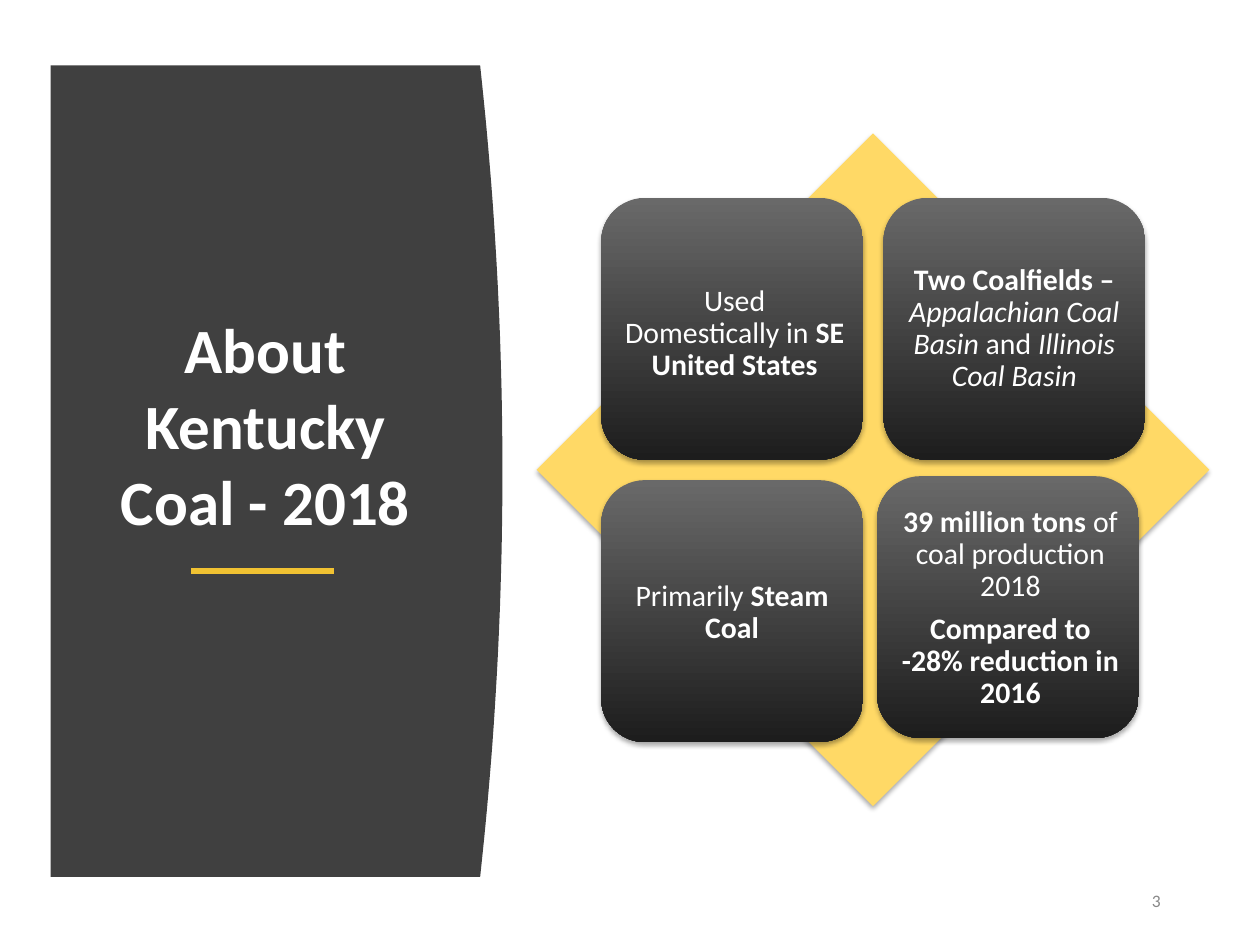
"""Build the "About Kentucky Coal - 2018" slide."""
from lxml.etree import SubElement
from pptx import Presentation
from pptx.dml.color import RGBColor
from pptx.enum.shapes import MSO_CONNECTOR as Connector
from pptx.enum.shapes import MSO_SHAPE as Shape
from pptx.enum.text import MSO_ANCHOR as Anchor
from pptx.enum.text import PP_ALIGN as Align
from pptx.oxml.ns import qn
from pptx.util import Cm, Pt

COLORS = {
    "panel": "404040",
    "diamond": "FFD966",
    "accent": "F1C232",
    "card_top": "696969",
    "card_bottom": "1D1D1D",
    "white": "FFFFFF",
    "number": "888888",
    "shadow": "000000",
}
CARD_SIZE = 5.28
CARD_TEXT_WIDTH = 4.78

# Each card: position, text box (left, top, height), paragraphs of (text, style).
CARDS = [
    ((12.12, 3.99), (12.42, 4.34, 4.78),
     [[("Used Domestically in ", ""), ("SE United States", "b")]]),
    ((17.81, 3.99), (18.06, 4.24, 4.78),
     [[("Two Coalfields – ", "b"), ("Appalachian Coal Basin ", "i"),
       ("and", ""), (" Illinois Coal Basin", "i")]]),
    ((12.12, 9.68), (12.37, 9.96, 4.78),
     [[("Primarily", ""), (" Steam Coal", "b")]]),
    ((17.68, 9.6), (17.98, 9.83, 4.88),
     [[("39 million tons ", "b"), ("of coal production 2018", "")],
      [("Compared to -28% reduction in 2016", "b")]]),
]


def rgb(name):
    return RGBColor.from_string(COLORS[name])


def add_soft_shadow(shape):
    effects = shape._element.spPr.get_or_add_effectLst() if hasattr(
        shape._element.spPr, "get_or_add_effectLst") else SubElement(
        shape._element.spPr, qn("a:effectLst"))
    shadow = SubElement(effects, qn("a:outerShdw"), blurRad=str(Pt(3.1)),
                        dist=str(Pt(1.8)), dir="5400000", rotWithShape="0")
    color = SubElement(shadow, qn("a:srgbClr"), val=COLORS["shadow"])
    SubElement(color, qn("a:alpha"), val="35000")


def add_panel(page):
    left, top, edge, bulge, bottom = 1.02, 1.32, 9.68, 0.45, 17.68
    middle, half, steps = (top + bottom) / 2, (bottom - top) / 2, 48
    curve = []
    for step in range(steps + 1):
        offset = 2 * step / steps - 1
        curve.append((Cm(edge + bulge * (1 - offset ** 2)),
                      Cm(middle + half * offset)))
    builder = page.shapes.build_freeform(Cm(left), Cm(top))
    builder.add_line_segments(curve + [(Cm(left), Cm(bottom))], close=True)
    panel = builder.convert_to_shape()
    panel.shadow.inherit = False
    panel.fill.solid()
    panel.fill.fore_color.rgb = rgb("panel")
    panel.line.fill.background()


def add_text(page, position, paragraphs, size, color="white",
             align=Align.CENTER, inset=None, spacing=None):
    box = page.shapes.add_textbox(*map(Cm, position))
    frame = box.text_frame
    frame.word_wrap = True
    frame.vertical_anchor = Anchor.MIDDLE
    if inset is not None:
        frame.margin_left = frame.margin_right = Cm(inset)
        frame.margin_top = frame.margin_bottom = Cm(inset)
    for index, spans in enumerate(paragraphs):
        para = frame.add_paragraph() if index else frame.paragraphs[0]
        para.alignment = align
        para.line_spacing = spacing
        if index:
            para.space_before = Pt(6)
        para.font.name = "Calibri"
        para.font.size = Pt(size)
        para.font.color.rgb = rgb(color)
        for text, style in spans:
            span = para.add_run()
            span.text = text
            span.font.bold = "b" in style
            span.font.italic = "i" in style


def add_diamond(page):
    diamond = page.shapes.add_shape(
        Shape.DIAMOND, Cm(10.82), Cm(2.69), Cm(13.56), Cm(13.56))
    diamond.fill.solid()
    diamond.fill.fore_color.rgb = rgb("diamond")
    diamond.line.fill.background()
    add_soft_shadow(diamond)


def add_card(page, position, text_place, paragraphs):
    left, top = position
    card = page.shapes.add_shape(
        Shape.ROUNDED_RECTANGLE, Cm(left), Cm(top), Cm(CARD_SIZE), Cm(CARD_SIZE))
    card.adjustments[0] = 0.167
    card.fill.gradient()
    card.fill.gradient_angle = 270
    for stop, name in zip(card.fill.gradient_stops, ("card_top", "card_bottom")):
        stop.color.rgb = rgb(name)
    card.line.fill.background()
    add_soft_shadow(card)
    text_left, text_top, height = text_place
    add_text(page, (text_left, text_top, CARD_TEXT_WIDTH, height), paragraphs,
             17, inset=0.18, spacing=0.9)


def add_rule(page):
    rule = page.shapes.add_connector(
        Connector.STRAIGHT, Cm(3.86), Cm(11.51), Cm(6.73), Cm(11.51))
    rule.line.color.rgb = rgb("accent")
    rule.line.width = Pt(3)
    SubElement(rule._element.spPr, qn("a:effectLst"))


def main():
    deck = Presentation()
    deck.slide_width, deck.slide_height = Cm(25.4), Cm(19.05)
    page = deck.slides.add_slide(deck.slide_layouts[6])
    add_panel(page)
    add_text(page, (1.8, 1.9, 7.11, 13.31),
             [[("About Kentucky Coal - 2018", "b")]], 36)
    add_text(page, (22.35, 17.65, 1.3, 1.02), [[("3", "")]], 10,
             color="number", align=Align.RIGHT)
    add_diamond(page)
    for card in CARDS:
        add_card(page, *card)
    add_rule(page)
    deck.save("out.pptx")


if __name__ == "__main__":
    main()
